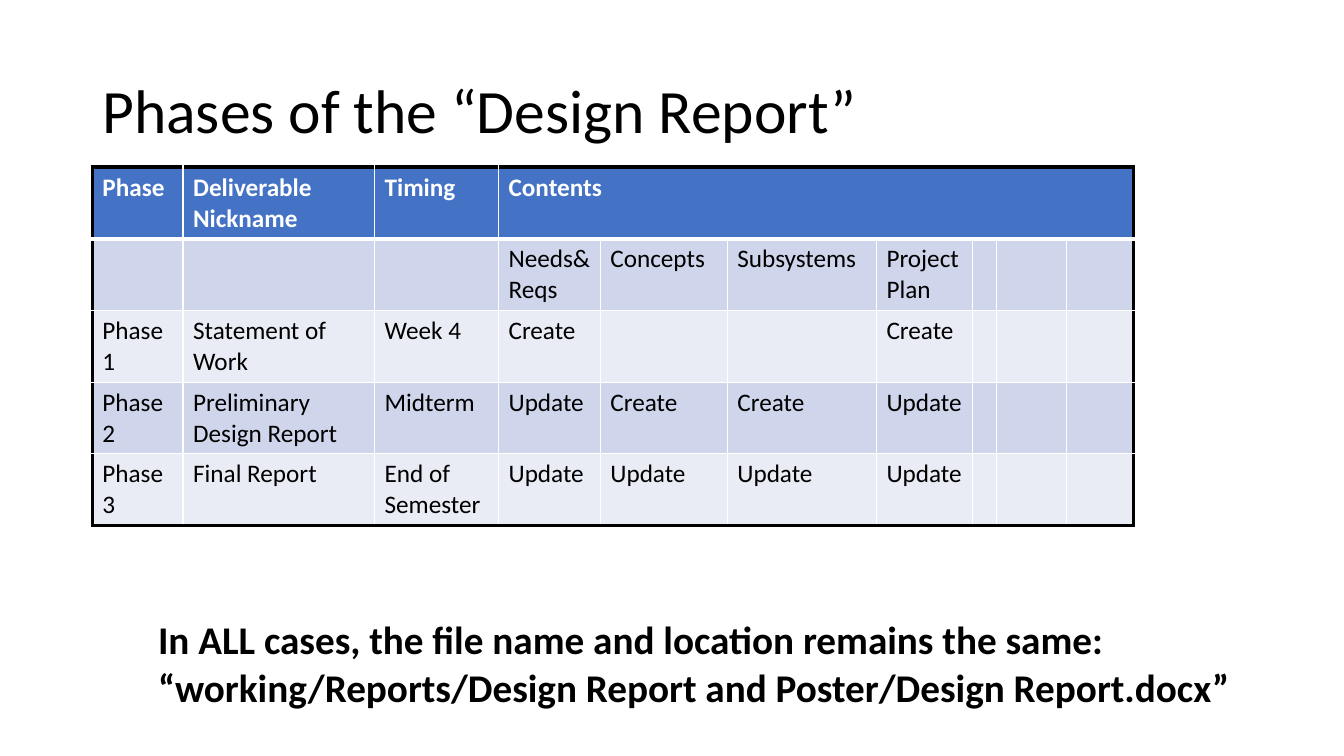
import dataclasses

import lxml.etree
import pptx
import pptx.dml.color
import pptx.enum.text
import pptx.oxml.ns
import pptx.util


@dataclasses.dataclass(frozen=True)
class Theme:
    font: str = "Calibri"
    ink: str = "000000"
    paper: str = "FFFFFF"
    header: str = "4472C4"
    bands: tuple = ("E9EBF5", "CFD5EA")
    title_size: int = 44
    note_size: int = 28
    table_size: int = 18
    thin: int = 1
    thick: int = 3


class SlideBuilder:
    """Places elements on a grid of 80 columns by 45 rows."""

    def __init__(self, prs, theme):
        self.theme = theme
        self.col = prs.slide_width / 80
        self.row = prs.slide_height / 45
        self.slide = prs.slides.add_slide(prs.slide_layouts[6])

    def box(self, left, top, width, height):
        return (round(left * self.col), round(top * self.row),
                round(width * self.col), round(height * self.row))

    def style(self, p, size, color, bold=False):
        p.font.name = self.theme.font
        p.font.size = pptx.util.Pt(size)
        p.font.bold = bold
        p.font.color.rgb = pptx.dml.color.RGBColor.from_string(color)

    def text(self, lines, at, size, bold=False, wrap=True, spacing=None,
             anchor=pptx.enum.text.MSO_ANCHOR.TOP,
             fit=pptx.enum.text.MSO_AUTO_SIZE.NONE):
        tf = self.slide.shapes.add_textbox(*self.box(*at)).text_frame
        tf.word_wrap = wrap
        tf.auto_size = fit
        tf.vertical_anchor = anchor
        tf.text = "\n".join(lines)
        for p in tf.paragraphs:
            self.style(p, size, self.theme.ink, bold)
            if spacing:
                p.line_spacing = spacing

    def border(self, cell, side, color, width):
        tc_pr = cell._tc.get_or_add_tcPr()
        qn = pptx.oxml.ns.qn
        ln = lxml.etree.SubElement(tc_pr, qn(f"a:ln{side}"),
                                   w=str(pptx.util.Pt(width)))
        fill = lxml.etree.SubElement(ln, qn("a:solidFill"))
        lxml.etree.SubElement(fill, qn("a:srgbClr"), val=color)

    def table(self, rows, left, top, widths, row_height, header_span):
        th = self.theme
        at = self.box(left, top, sum(widths), row_height * len(rows))
        table = self.slide.shapes.add_table(len(rows), len(widths), *at).table
        for column, width in zip(table.columns, widths):
            column.width = round(width * self.col)
        last_row, last_col = len(rows) - 1, len(widths) - 1
        outer, inner = (th.ink, th.thick), (th.paper, th.thin)
        under_header = (th.paper, th.thick)

        for i, texts in enumerate(rows):
            for j, text in enumerate(texts):
                cell = table.cell(i, j)
                cell.text = text
                is_header = i == 0
                self.style(cell.text_frame.paragraphs[0], th.table_size,
                           th.paper if is_header else th.ink, is_header)
                at_right = j == last_col or (is_header and j >= header_span)
                sides = {
                    "L": outer if j == 0 else inner,
                    "R": outer if at_right else inner,
                    "T": {0: outer, 1: under_header}.get(i, inner),
                    "B": {0: under_header, last_row: outer}.get(i, inner),
                }
                for side, (color, width) in sides.items():
                    self.border(cell, side, color, width)
                cell.fill.solid()
                cell.fill.fore_color.rgb = pptx.dml.color.RGBColor.from_string(
                    th.header if is_header else th.bands[i % 2])
        table.cell(0, header_span).merge(table.cell(0, last_col))


def main():
    prs = pptx.Presentation()
    prs.slide_width = pptx.util.Inches(13.333)
    prs.slide_height = pptx.util.Inches(7.5)
    theme = Theme()
    s = SlideBuilder(prs, theme)

    # Title
    s.text(["Phases of the “Design Report”"], (5.5, 2.4, 69, 8.7),
           theme.title_size, spacing=0.9,
           anchor=pptx.enum.text.MSO_ANCHOR.MIDDLE)

    # Phases and the contents due in each; the last three columns stay empty
    spare = [""] * 3
    phases = [
        ["Phase", "Deliverable Nickname", "Timing", "Contents", "", "", ""],
        ["", "", "", "Needs& Reqs", "Concepts", "Subsystems", "Project Plan"],
        ["Phase 1", "Statement of Work", "Week 4", "Create", "", "", "Create"],
        ["Phase 2", "Preliminary Design Report", "Midterm",
         "Update", "Create", "Create", "Update"],
        ["Phase 3", "Final Report", "End of Semester"] + ["Update"] * 4,
    ]
    s.table([row + spare for row in phases], left=5.5, top=9.96,
            widths=[5.4, 11.4, 7.38, 6.06, 7.56, 8.88, 5.7, 1.38, 4.2, 3.96],
            row_height=4.2, header_span=3)

    # File location note
    s.text(["In ALL cases, the file name and location remains the same:",
            "“working/Reports/Design Report and Poster/Design Report.docx”"],
           (8.82, 36.36, 65.64, 6.24), theme.note_size, bold=True, wrap=False,
           fit=pptx.enum.text.MSO_AUTO_SIZE.SHAPE_TO_FIT_TEXT)

    prs.save("out.pptx")


if __name__ == "__main__":
    main()
